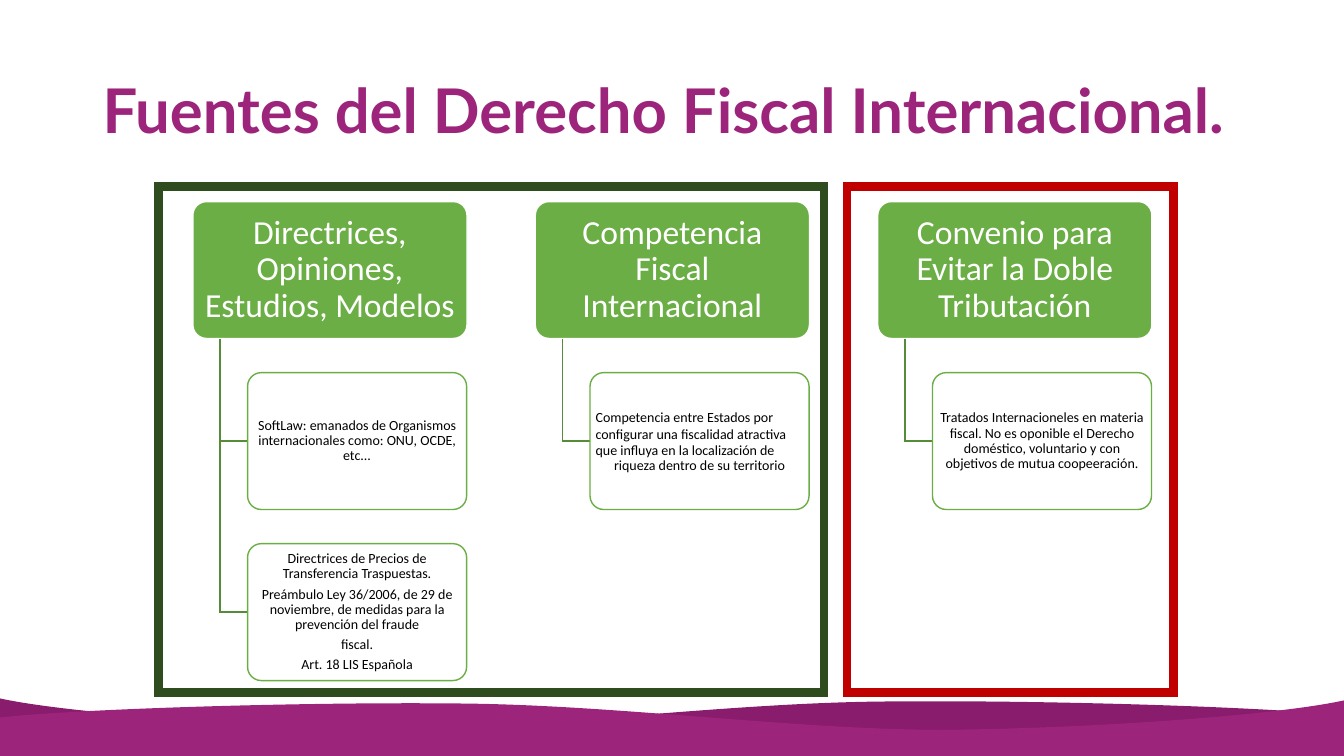
"""Build a slide on the sources of international tax law."""
import lxml.etree
import pptx
import pptx.dml.color
import pptx.enum.shapes
import pptx.enum.text
import pptx.oxml.ns
import pptx.util

Cm = pptx.util.Cm
Pt = pptx.util.Pt
RGBColor = pptx.dml.color.RGBColor
Align = pptx.enum.text.PP_ALIGN
Shape = pptx.enum.shapes.MSO_SHAPE
qn = pptx.oxml.ns.qn

WHITE = RGBColor(0xFF, 0xFF, 0xFF)
BLACK = RGBColor(0x00, 0x00, 0x00)
PURPLE = RGBColor(0x9C, 0x24, 0x7B)
DARK_PURPLE = RGBColor(0x89, 0x1C, 0x6C)
GREEN = RGBColor(0x6B, 0xAE, 0x45)
BRANCH_GREEN = RGBColor(0x56, 0x8B, 0x37)
FOREST = RGBColor(0x2F, 0x4C, 0x1E)
RED = RGBColor(0xC0, 0x00, 0x00)

SLIDE_WIDTH, SLIDE_HEIGHT = 33.87, 19.05
COLUMN_LEFT, COLUMN_PITCH = 4.86, 8.63
ROW_TOP, ROW_PITCH = 5.08, 4.31
SOURCE_WIDTH, DETAIL_WIDTH, BOX_HEIGHT = 6.91, 5.52, 3.45
TRUNK_INDENT, DETAIL_INDENT = 0.69, 1.38

WAVE_START = (33.87, 18.03)
WAVE_CURVES = [
    ((31.9, 17.81), (26.06, 17.63), (22.1, 17.68)),
    ((18.16, 17.73), (13.79, 18.34), (10.11, 18.34)),
    ((6.43, 18.31), (1.73, 17.98), (0, 17.6)),
]

SOURCES = [
    ("Directrices, Opiniones, Estudios, Modelos", [
        ["SoftLaw: emanados de Organismos internacionales como: ONU, OCDE, etc..."],
        [
            "Directrices de Precios de Transferencia Traspuestas.",
            "Preámbulo Ley 36/2006, de 29 de noviembre, de medidas para la "
            "prevención del fraude\nfiscal.",
            "Art. 18 LIS Española",
        ],
    ]),
    ("Competencia Fiscal Internacional", [
        ["Competencia entre Estados por\nconfigurar una fiscalidad atractiva\n"
         "que influya en la localización de\nriqueza dentro de su territorio"],
    ]),
    ("Convenio para Evitar la Doble Tributación", [
        ["Tratados Internacioneles en materia fiscal. No es oponible el Derecho "
         "doméstico, voluntario y con objetivos de mutua coopeeración."],
    ]),
]


def write(paragraph, text, size=10, color=BLACK, font="Calibri", bold=False,
          align=Align.CENTER, after=3.5):
    """Write formatted text into a paragraph."""
    run = paragraph.add_run()
    run.text = text
    run.font.name = font
    run.font.size = Pt(size)
    run.font.bold = bold
    run.font.color.rgb = color
    paragraph.alignment = align
    paragraph.line_spacing = 0.9
    paragraph.space_after = Pt(after)


def style(shape, fill=None, line=None, width=1):
    """Set the fill and sharp-cornered outline of a shape and remove its shadow."""
    shape.shadow.inherit = False
    if fill is None:
        shape.fill.background()
    else:
        shape.fill.solid()
        shape.fill.fore_color.rgb = fill
    if line is None:
        shape.line.fill.background()
    else:
        shape.line.color.rgb = line
        shape.line.width = Pt(width)
        outline = shape.element.find(".//" + qn("a:ln"))
        lxml.etree.SubElement(outline, qn("a:miter"), lim="800000")


def add_path(slide, points, close):
    """Draw a path through points given in centimetres."""
    start, *rest = [(Cm(x), Cm(y)) for x, y in points]
    builder = slide.shapes.build_freeform(*start)
    builder.add_line_segments(rest, close=close)
    return builder.convert_to_shape()


def add_wave(slide, start, curves, color):
    """Draw a footer wave bounded above by Bezier curves."""
    ends = [curve[-1] for curve in curves]
    corners = [(ends[-1][0], SLIDE_HEIGHT), (start[0], SLIDE_HEIGHT)]
    wave = add_path(slide, [start, *ends, *corners], close=True)
    segments = wave.element.findall(".//" + qn("a:lnTo"))
    for segment, curve in zip(segments, curves):
        segment.tag = qn("a:cubicBezTo")
        for position, (x, y) in enumerate(curve[:2]):
            control = lxml.etree.Element(
                qn("a:pt"), x=str(Cm(x) - wave.left), y=str(Cm(y) - wave.top))
            segment.insert(position, control)
    style(wave, fill=color)


def mirror(point):
    """Mirror a wave point across the slide, slightly lower."""
    x, y = point
    return SLIDE_WIDTH - x, y + 0.05


def add_title(slide, text):
    """Place and format the title."""
    title = slide.shapes.title
    title.left, title.top = Cm(2.33), Cm(1.01)
    title.width, title.height = Cm(29.21), Cm(3.68)
    title.text_frame.vertical_anchor = pptx.enum.text.MSO_ANCHOR.MIDDLE
    write(title.text_frame.paragraphs[0], text, size=44, color=PURPLE,
          font="Lato", bold=True, align=Align.JUSTIFY, after=0)


def add_box(slide, left, top, width, paragraphs, fill, line, margin, **text_format):
    """Draw a rounded box holding paragraphs."""
    box = slide.shapes.add_shape(
        Shape.ROUNDED_RECTANGLE, Cm(left), Cm(top), Cm(width), Cm(BOX_HEIGHT))
    box.adjustments[0] = 0.1
    style(box, fill, line)
    frame = box.text_frame
    frame.word_wrap = True
    frame.vertical_anchor = pptx.enum.text.MSO_ANCHOR.MIDDLE
    frame.margin_left = frame.margin_right = Cm(margin)
    frame.margin_top = frame.margin_bottom = Cm(0.03)
    for index, text in enumerate(paragraphs):
        paragraph = frame.add_paragraph() if index else frame.paragraphs[0]
        write(paragraph, text, **text_format)


def add_source(slide, left, name, details):
    """Draw a source with its details hanging below it."""
    add_box(slide, left, ROW_TOP, SOURCE_WIDTH, [name], GREEN, WHITE, 0.12,
            size=24, color=WHITE, after=8.4)
    trunk, detail_left = left + TRUNK_INDENT, left + DETAIL_INDENT
    for row, paragraphs in enumerate(details, start=1):
        top = ROW_TOP + row * ROW_PITCH
        middle = top + BOX_HEIGHT / 2
        branch = [(trunk, ROW_TOP + BOX_HEIGHT), (trunk, middle), (detail_left, middle)]
        style(add_path(slide, branch, close=False), line=BRANCH_GREEN)
        add_box(slide, detail_left, top, DETAIL_WIDTH, paragraphs, WHITE, GREEN, 0.04)


def add_frame(slide, left, width, color):
    """Draw a thick frame around a group of sources."""
    frame = slide.shapes.add_shape(
        Shape.RECTANGLE, Cm(left), Cm(4.7), Cm(width), Cm(12.75))
    style(frame, line=color, width=6)


def main():
    """Build and save the presentation."""
    presentation = pptx.Presentation()
    presentation.slide_width = Cm(SLIDE_WIDTH)
    presentation.slide_height = Cm(SLIDE_HEIGHT)
    slide = presentation.slides.add_slide(presentation.slide_layouts[5])
    add_wave(slide, WAVE_START, WAVE_CURVES, DARK_PURPLE)
    front_curves = [tuple(map(mirror, curve)) for curve in WAVE_CURVES]
    add_wave(slide, mirror(WAVE_START), front_curves, PURPLE)
    add_title(slide, "Fuentes del Derecho Fiscal Internacional.")
    for column, (name, details) in enumerate(SOURCES):
        add_source(slide, COLUMN_LEFT + column * COLUMN_PITCH, name, details)
    add_frame(slide, 4, 16.77, FOREST)
    add_frame(slide, 21.35, 8.23, RED)
    presentation.save("out.pptx")


if __name__ == "__main__":
    main()
